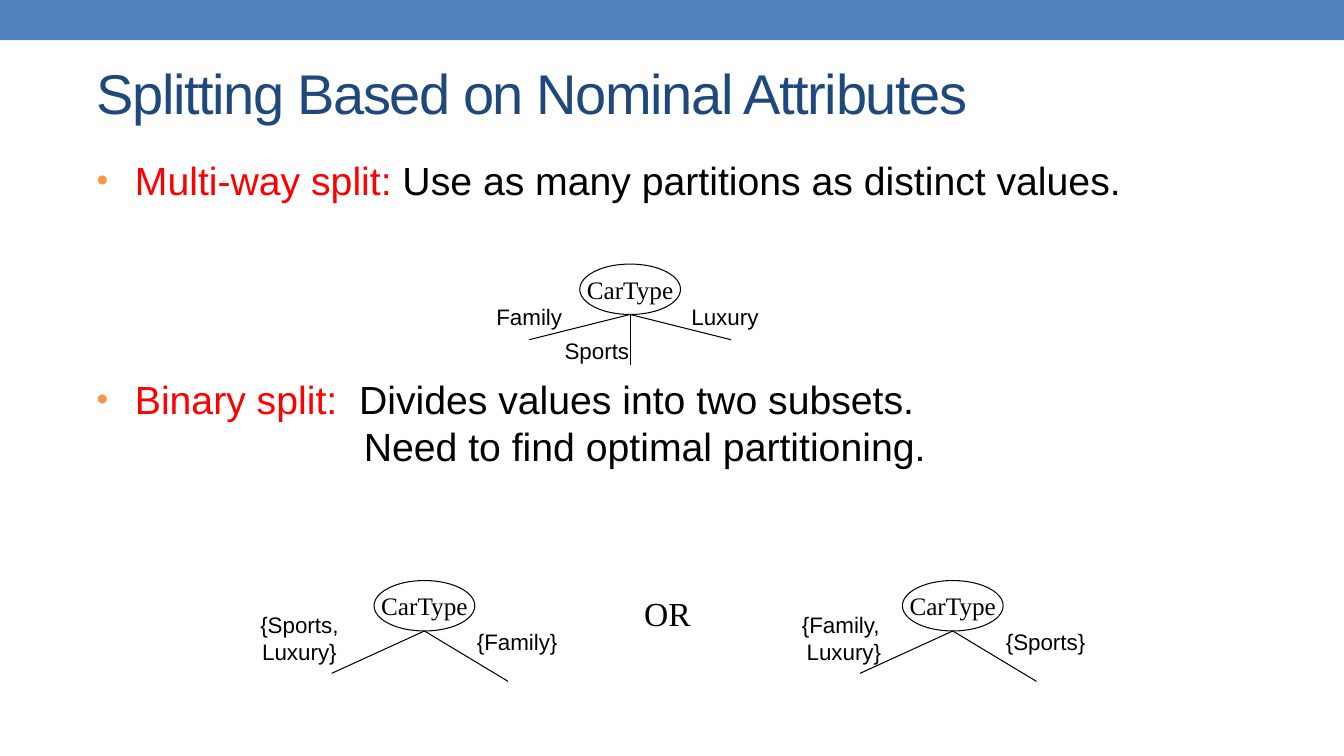
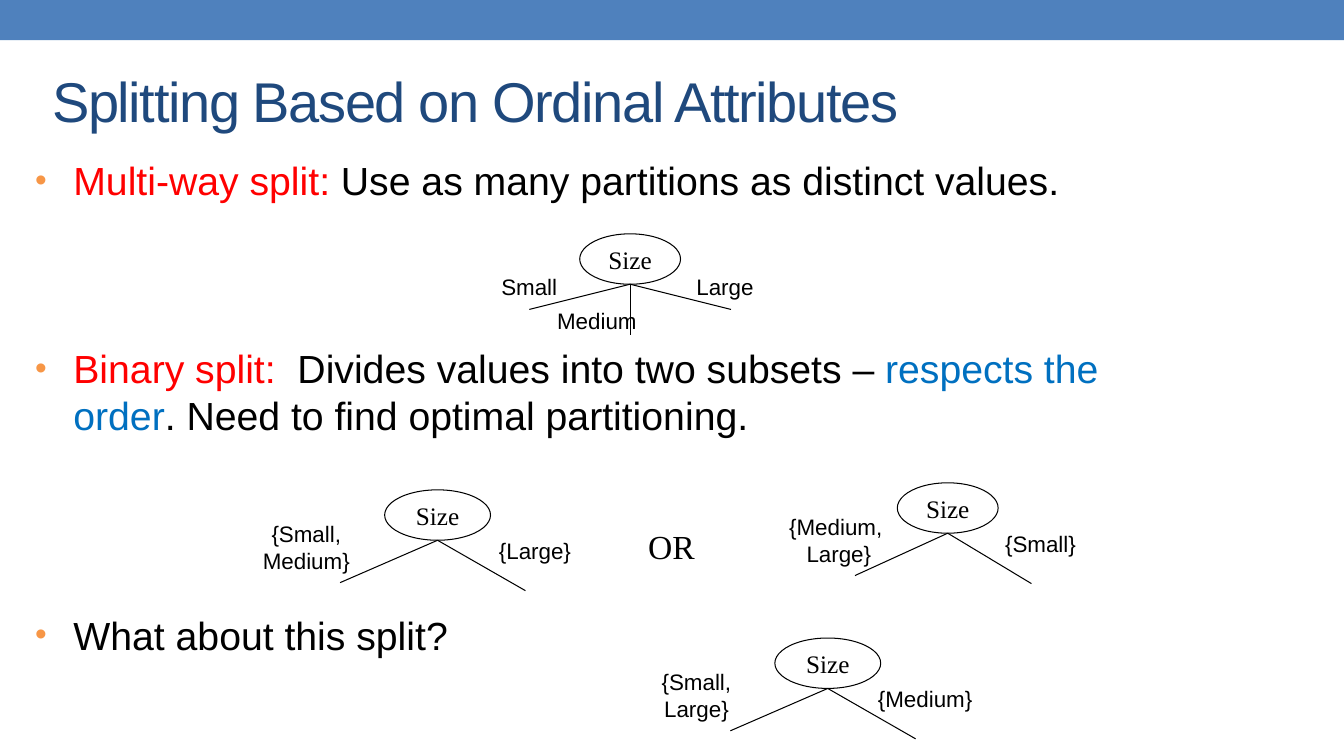
"""Build two slides on splitting by nominal and ordinal attributes."""
from dataclasses import dataclass

from pptx import Presentation
from pptx import util as u
from pptx.dml.color import RGBColor
from pptx.enum import shapes, text
from pptx.oxml import parse_xml
from pptx.oxml.ns import nsdecls

In = u.Inches


@dataclass(frozen=True)
class Theme:
    band: str = "4F81BD"
    title: str = "1F497D"
    bullet: str = "F79646"
    key: str = "FF0000"
    accent: str = "0070C0"
    ink: str = "000000"
    paper: str = "FFFFFF"
    sans: str = "Arial"
    serif: str = "Times New Roman"
    title_size: int = 40
    body_size: int = 28
    or_size: int = 24
    node_size: int = 18
    label_size: int = 16


T = Theme()
WIDTH, HEIGHT = 13.33, 7.5
NODE_HEIGHT = 0.5
HANGING = 0.38
FIRST_GAP = 5.6
WIDE_GAP = 123.2


class Deck:
    """Hold the presentation, its theme and the current slide."""

    def __init__(self):
        self.prs = Presentation()
        self.prs.slide_width, self.prs.slide_height = In(WIDTH), In(HEIGHT)
        self.s = None

    def slide(self, title, x, y, w, h):
        self.s = self.prs.slides.add_slide(self.prs.slide_layouts[6])
        band = self.shape(shapes.MSO_SHAPE.RECTANGLE, 0, 0, WIDTH, 0.4, T.band)
        band.line.fill.background()
        tf = self.box(x, y, w, h, anchor=text.MSO_ANCHOR.MIDDLE)
        r = self.run(tf.paragraphs[0], title, T.title_size, T.title)
        r._r.get_or_add_rPr().set("spc", "-100")

    def shape(self, kind, x, y, w, h, fill):
        sp = self.s.shapes.add_shape(kind, In(x), In(y), In(w), In(h))
        sp.shadow.inherit = False
        sp.fill.solid()
        sp.fill.fore_color.rgb = RGBColor.from_string(fill)
        return sp

    def box(self, x, y, w, h, wrap=True, anchor=text.MSO_ANCHOR.TOP):
        tf = self.s.shapes.add_textbox(In(x), In(y), In(w), In(h)).text_frame
        tf.word_wrap = wrap
        tf.vertical_anchor = anchor
        return tf

    def run(self, p, words, size, color=T.ink, font=T.sans):
        r = p.add_run()
        r.text = words
        r.font.size = u.Pt(size)
        r.font.name = font
        r.font.color.rgb = RGBColor.from_string(color)
        return r

    def body(self, x, y, w, h, paragraphs):
        tf = self.box(x, y, w, h)
        for i, (gap, indent, runs) in enumerate(paragraphs):
            p = tf.add_paragraph() if i else tf.paragraphs[0]
            p.space_before = u.Pt(gap)
            pPr = p._p.get_or_add_pPr()
            pPr.set("marL", str(In(indent or HANGING)))
            if not indent:
                self.bullet(pPr)
            for words, color in runs:
                self.run(p, words, T.body_size, color)

    def bullet(self, pPr):
        pPr.set("indent", str(-In(HANGING)))
        ns = nsdecls("a")
        for xml in (
            f'<a:buClr {ns}><a:srgbClr val="{T.bullet}"/></a:buClr>',
            f'<a:buSzPct {ns} val="85000"/>',
            f'<a:buFont {ns} typeface="{T.sans}"/>',
            f'<a:buChar {ns} char="•"/>',
        ):
            pPr.append(parse_xml(xml))

    def label(self, cx, cy, words, size=T.label_size, font=T.sans):
        lines = words.split("\n")
        w, h = 1.2, 0.1 + 0.27 * len(lines)
        tf = self.box(cx - w / 2, cy - h / 2, w, h, False, text.MSO_ANCHOR.MIDDLE)
        p = tf.paragraphs[0]
        p.alignment = text.PP_ALIGN.CENTER
        for i, line in enumerate(lines):
            if i:
                p.add_line_break()
            self.run(p, line, size, font=font)

    def line(self, x1, y1, x2, y2):
        c = self.s.shapes.add_connector(
            shapes.MSO_CONNECTOR.STRAIGHT, In(x1), In(y1), In(x2), In(y2))
        c.line.color.rgb = RGBColor.from_string(T.ink)
        c.line.width = u.Pt(0.75)
        c._element.spPr.append(parse_xml(f"<a:effectLst {nsdecls('a')}/>"))

    def tree(self, cx, y, name, branches, w=1.0):
        sp = self.shape(shapes.MSO_SHAPE.OVAL, cx - w / 2, y, w, NODE_HEIGHT, T.paper)
        sp.line.color.rgb = RGBColor.from_string(T.ink)
        sp.line.width = u.Pt(0.75)
        tf = sp.text_frame
        tf.word_wrap = False
        tf.vertical_anchor = text.MSO_ANCHOR.MIDDLE
        p = tf.paragraphs[0]
        p.alignment = text.PP_ALIGN.CENTER
        self.run(p, name, T.node_size, font=T.serif)
        base = y + NODE_HEIGHT
        for (dx, dy), _, _ in branches:
            self.line(cx, base, cx + dx * w, base + dy)
        for _, (dx, dy), words in branches:
            self.label(cx + dx * w, base + dy, words)

    def multiway(self, cx, y, name, left, middle, right):
        self.tree(cx, y, name, [
            ((-1, 0.25), (-1, 0.02), left),
            ((0, 0.5), (-0.33, 0.36), middle),
            ((1, 0.25), (0.94, 0.02), right),
        ])

    def binary(self, cx, y, name, left, right, w=1.0, reach=1.24):
        self.tree(cx, y, name, [
            ((-0.92, 0.42), (-reach, 0.07), left),
            ((0.83, 0.5), (0.92, 0.1), right),
        ], w)

    def either(self, cx, cy):
        self.label(cx, cy, "OR", T.or_size, T.serif)


def main():
    d = Deck()
    multiway = (FIRST_GAP, 0, [
        ("Multi-way split:", T.key),
        (" Use as many partitions as distinct values.", T.ink)])

    d.slide("Splitting Based on Nominal Attributes", 0.86, 0.5, 9.42, 0.83)
    d.body(0.86, 1.5, 11.39, 4.08, [
        multiway,
        (WIDE_GAP, 0, [
            ("Binary split:", T.key),
            ("  Divides values into two subsets.", T.ink)]),
        (0, 2.65, [("Need to find optimal partitioning.", T.ink)]),
    ])
    d.multiway(6.25, 2.62, "CarType", "Family", "Sports", "Luxury")
    d.binary(9.45, 5.76, "CarType", "{Family, \nLuxury}", "{Sports}", reach=1.08)
    d.binary(4.21, 5.76, "CarType", "{Sports,\nLuxury}", "{Family}")
    d.either(6.62, 6.08)

    d.slide("Splitting Based on Ordinal Attributes", 0.42, 0.45, 10.75, 1.08)
    d.body(0.25, 1.5, 11.17, 5.75, [
        multiway,
        (100.8, 0, [
            ("Binary split:", T.key),
            ("  Divides values into two subsets – ", T.ink),
            ("respects the order", T.accent),
            (". Need to find optimal partitioning.", T.ink)]),
        (WIDE_GAP, 0, [("What about this split?", T.ink)]),
    ])
    d.multiway(6.25, 2.32, "Size", "Small", "Medium", "Large")
    d.binary(9.4, 4.79, "Size", "{Medium, \nLarge}", "{Small}", reach=1.08)
    d.binary(4.34, 4.86, "Size", "{Small,\nMedium}", "{Large}", w=1.05)
    d.either(6.66, 5.42)
    d.binary(8.21, 6.33, "Size", "{Small,\nLarge}", "{Medium}", w=1.05)

    d.prs.save("out.pptx")


if __name__ == "__main__":
    main()
